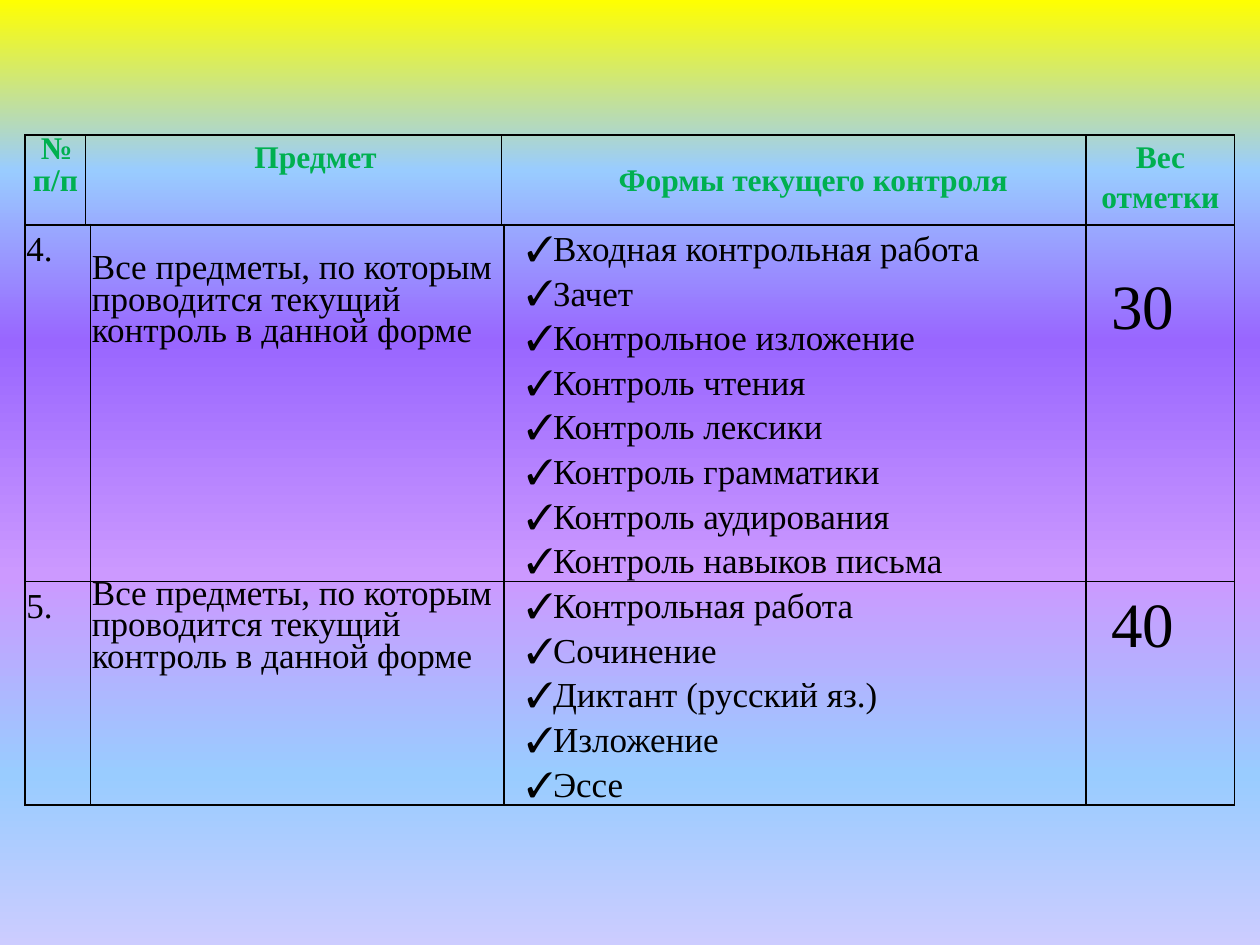
from lxml.etree import SubElement
from pptx import Presentation
from pptx.dml.color import RGBColor
from pptx.enum.text import PP_ALIGN
from pptx.oxml.ns import qn
from pptx.util import Inches, Pt

FONT = "Times New Roman"
STOPS = [(0, "FFFF00"), (18, "99CCFF"), (36, "9966FF"),
         (61, "CC99FF"), (82, "99CCFF"), (100, "CCCCFF")]
LEFT, HEAD_TOP, BODY_TOP = 0.2, 1.07, 1.78
EXACT, LOOSE = Pt(18), 1.15

HEAD_STYLE = {"size": 18, "bold": True, "color": "00B050", "align": PP_ALIGN.CENTER}
HEAD = [[
    (["№ п/п"], {"spacing": EXACT, "indent": 0.02}),
    (["Предмет"], {"margin": 0.35}),
    (["Формы текущего контроля"], {"spacing": EXACT, "margin": 0.31, "top": 0.25}),
    (["Вес отметки"], {}),
]]

SUBJECT = "Все предметы, по которым проводится текущий контроль в данной форме"
CHECKS = {"margin": 0.1, "indent": 0.07, "bullet": "✓"}
WEIGHT = {"size": 36, "margin": 0.19}
BODY = [
    [
        (["4."], {}),
        ([SUBJECT], {"spacing": EXACT, "top": 0.25}),
        (["Входная контрольная работа", "Зачет", "Контрольное изложение",
          "Контроль чтения", "Контроль лексики", "Контроль грамматики",
          "Контроль аудирования", "Контроль навыков письма"], CHECKS),
        (["30"], {**WEIGHT, "top": 0.31}),
    ],
    [
        (["5."], {}),
        ([SUBJECT], {"spacing": EXACT}),
        (["Контрольная работа", "Сочинение", "Диктант (русский яз.)",
          "Изложение", "Эссе"], CHECKS),
        (["40"], WEIGHT),
    ],
]
TABLES = [
    (BODY, BODY_TOP, [0.52, 3.28, 4.62, 1.18], [2.83, 1.77], {}),
    (HEAD, HEAD_TOP, [0.48, 3.3, 4.64, 1.18], [0.72], HEAD_STYLE),
]
DEFAULTS = {"size": 20, "bold": False, "color": "000000", "align": PP_ALIGN.LEFT,
            "spacing": LOOSE, "margin": 0, "indent": 0, "top": 0, "bullet": None}


def rgb(value):
    return RGBColor.from_string(value)


def set_background(s):
    s.background.fill.gradient()
    s.background.fill.gradient_angle = 270
    stops = s.element.find(".//" + qn("a:gsLst"))
    for old in list(stops):
        stops.remove(old)
    for pos, color in STOPS:
        gs = SubElement(stops, qn("a:gs"), pos=str(pos * 1000))
        SubElement(gs, qn("a:srgbClr"), val=color)


def add_borders(cell):
    pr = cell._tc.get_or_add_tcPr()
    for i, side in enumerate(("lnL", "lnR", "lnT", "lnB")):
        ln = pr.makeelement(qn("a:" + side), {"w": str(Pt(1))})
        SubElement(SubElement(ln, qn("a:solidFill")), qn("a:srgbClr"), val="000000")
        pr.insert(i, ln)


def add_line(p, text, f):
    p.alignment, p.line_spacing = f["align"], f["spacing"]
    pr = p._p.get_or_add_pPr()
    pr.set("marL", str(Inches(f["margin"])))
    pr.set("indent", str(Inches(f["indent"])))
    if f["bullet"]:
        SubElement(pr, qn("a:buFont"), typeface=FONT)
        SubElement(pr, qn("a:buChar"), char=f["bullet"])
    r = p.add_run()
    r.text = text
    for name, value in {"name": FONT, "size": Pt(f["size"]), "bold": f["bold"]}.items():
        setattr(r.font, name, value)
    r.font.color.rgb = rgb(f["color"])


def fill_cell(cell, lines, f):
    cell.fill.background()
    add_borders(cell)
    margins = {"left": 0.01, "right": 0.01, "top": f["top"], "bottom": 0}
    for side, value in margins.items():
        setattr(cell, "margin_" + side, Inches(value))
    tf = cell.text_frame
    for i, text in enumerate(lines):
        add_line(tf.add_paragraph() if i else tf.paragraphs[0], text, f)


def add_grid(s, rows, top, widths, heights, style):
    box = [Inches(v) for v in (LEFT, top, sum(widths), sum(heights))]
    table = s.shapes.add_table(len(rows), len(widths), *box).table
    table.first_row = table.horz_banding = False
    for col, width in zip(table.columns, widths):
        col.width = Inches(width)
    for row, height, cells in zip(table.rows, heights, rows):
        row.height = Inches(height)
        for cell, (lines, extra) in zip(row.cells, cells):
            fill_cell(cell, lines, {**DEFAULTS, **style, **extra})


def main():
    prs = Presentation()
    prs.slide_width, prs.slide_height = Inches(10), Inches(7.5)
    s = prs.slides.add_slide(prs.slide_layouts[6])
    set_background(s)
    for grid in TABLES:
        add_grid(s, *grid)
    prs.save("out.pptx")


if __name__ == "__main__":
    main()
